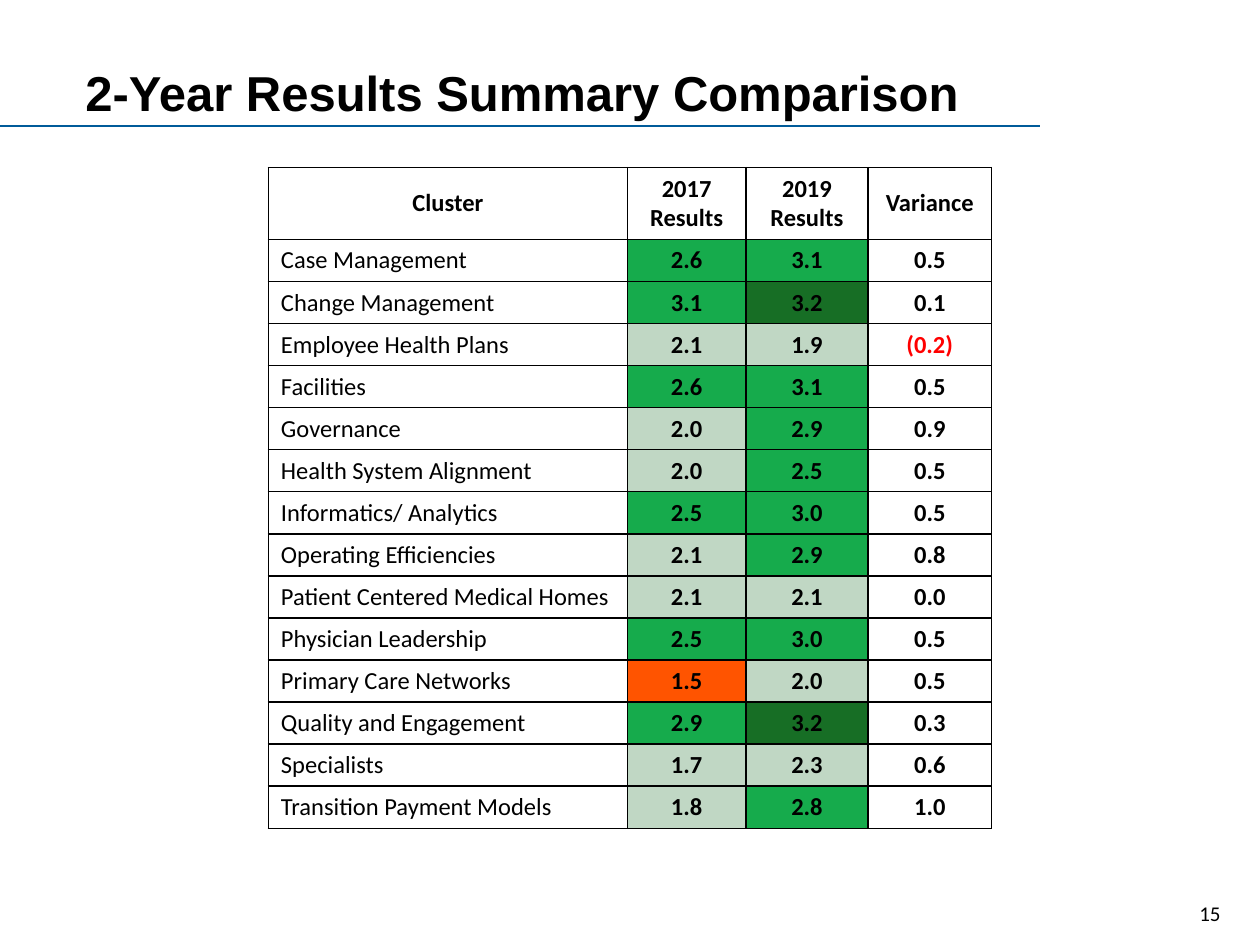
from dataclasses import dataclass

from lxml import etree
from pptx import Presentation
from pptx import util as u
from pptx.dml.color import RGBColor
from pptx.enum import shapes, text
from pptx.oxml.ns import qn


@dataclass(frozen=True)
class Theme:
    heading_font: str = "Arial"
    body_font: str = "Calibri"
    title_size: int = 28
    table_size: int = 14
    number_size: int = 12
    ink: str = "000000"
    negative: str = "FF0000"
    rule: str = "005B99"
    low: str = "FF5400"
    good: str = "16AB4C"
    best: str = "176E25"
    pale_alpha: int = 27


RESULTS = [
    ("Case Management", "2.6", "3.1", "0.5"),
    ("Change Management", "3.1", "3.2", "0.1"),
    ("Employee Health Plans", "2.1", "1.9", "(0.2)"),
    ("Facilities", "2.6", "3.1", "0.5"),
    ("Governance", "2.0", "2.9", "0.9"),
    ("Health System Alignment", "2.0", "2.5", "0.5"),
    ("Informatics/ Analytics", "2.5", "3.0", "0.5"),
    ("Operating Efficiencies", "2.1", "2.9", "0.8"),
    ("Patient Centered Medical Homes", "2.1", "2.1", "0.0"),
    ("Physician Leadership", "2.5", "3.0", "0.5"),
    ("Primary Care Networks", "1.5", "2.0", "0.5"),
    ("Quality and Engagement", "2.9", "3.2", "0.3"),
    ("Specialists", "1.7", "2.3", "0.6"),
    ("Transition Payment Models", "1.8", "2.8", "1.0"),
]
HEADINGS = ("Cluster", "2017 Results", "2019 Results", "Variance")
COLUMN_WIDTHS = (2.85, 0.94, 0.97, 0.98)
HEADER_HEIGHT, ROW_HEIGHT = 0.57, 0.33


class SlideBuilder:
    def __init__(self, slide, theme):
        self.slide = slide
        self.theme = theme

    def add_wording(self, frame, wording, color=None, align=None, **font_format):
        paragraph = frame.paragraphs[0]
        paragraph.alignment = align
        run = paragraph.add_run()
        run.text = wording
        for name, value in font_format.items():
            setattr(run.font, name, value)
        run.font.color.rgb = RGBColor.from_string(color or self.theme.ink)

    def label(self, wording, box, top_inset=0.05, **font_format):
        frame = self.slide.shapes.add_textbox(*map(u.Inches, box)).text_frame
        frame.word_wrap = True
        frame.margin_top = u.Inches(top_inset)
        self.add_wording(frame, wording, **font_format)

    def rule(self, start, end):
        line = self.slide.shapes.add_connector(
            shapes.MSO_CONNECTOR.STRAIGHT, *map(u.Inches, start + end))
        line.line.color.rgb = RGBColor.from_string(self.theme.rule)
        line.line.width = u.Pt(0.75)
        etree.SubElement(line._element.spPr, qn("a:effectLst"))

    def border(self, cell):
        properties = cell._tc.get_or_add_tcPr()
        for position, side in enumerate(("lnL", "lnR", "lnT", "lnB")):
            edge = etree.Element(qn(f"a:{side}"), w=str(u.Pt(1)))
            solid = etree.SubElement(edge, qn("a:solidFill"))
            etree.SubElement(solid, qn("a:srgbClr"), val=self.theme.ink)
            properties.insert(position, edge)

    def shade(self, cell, score):
        theme = self.theme
        pale = 1.5 < score < 2.5
        color = (theme.low if score <= 1.5
                 else theme.good if 2.5 <= score < 3.2 else theme.best)
        cell.fill.solid()
        cell.fill.fore_color.rgb = RGBColor.from_string(color)
        if pale:
            tone = cell._tc.tcPr.find(f".//{qn('a:srgbClr')}")
            etree.SubElement(tone, qn("a:alpha"), val=str(theme.pale_alpha * 1000))

    def results_table(self, left, top):
        theme = self.theme
        rows = [HEADINGS, *RESULTS]
        heights = [HEADER_HEIGHT] + [ROW_HEIGHT] * len(RESULTS)
        table = self.slide.shapes.add_table(
            len(rows), len(HEADINGS), u.Inches(left), u.Inches(top),
            u.Inches(sum(COLUMN_WIDTHS)), u.Inches(sum(heights))).table
        table.first_row = table.horz_banding = False
        for column, width in zip(table.columns, COLUMN_WIDTHS):
            column.width = u.Inches(width)
        for r, (entries, height) in enumerate(zip(rows, heights)):
            table.rows[r].height = u.Inches(height)
            for c, entry in enumerate(entries):
                cell = table.cell(r, c)
                is_cluster = r > 0 and c == 0
                if r > 0 and c in (1, 2):
                    self.shade(cell, float(entry))
                else:
                    cell.fill.background()
                if r == 0:
                    cell.vertical_anchor = text.MSO_ANCHOR.MIDDLE
                self.border(cell)
                self.add_wording(
                    cell.text_frame, entry,
                    color=theme.negative if entry.startswith("(") else theme.ink,
                    align=text.PP_ALIGN.LEFT if is_cluster else text.PP_ALIGN.CENTER,
                    name=theme.body_font, size=u.Pt(theme.table_size),
                    bold=not is_cluster)


def main():
    deck = Presentation()
    deck.slide_width, deck.slide_height = u.Inches(10), u.Inches(7.5)
    theme = Theme()
    builder = SlideBuilder(deck.slides.add_slide(deck.slide_layouts[6]), theme)
    builder.label("15", (9.42, 7.1, 0.58, 0.4),
                  name=theme.body_font, size=u.Pt(theme.number_size))
    builder.rule((0, 1), (8.25, 1))
    builder.label("2-Year Results Summary Comparison", (0.58, 0.41, 7.25, 0.5),
                  top_inset=0.09, name=theme.heading_font,
                  size=u.Pt(theme.title_size), bold=True)
    builder.results_table(2.13, 1.33)
    deck.save("out.pptx")


if __name__ == "__main__":
    main()
